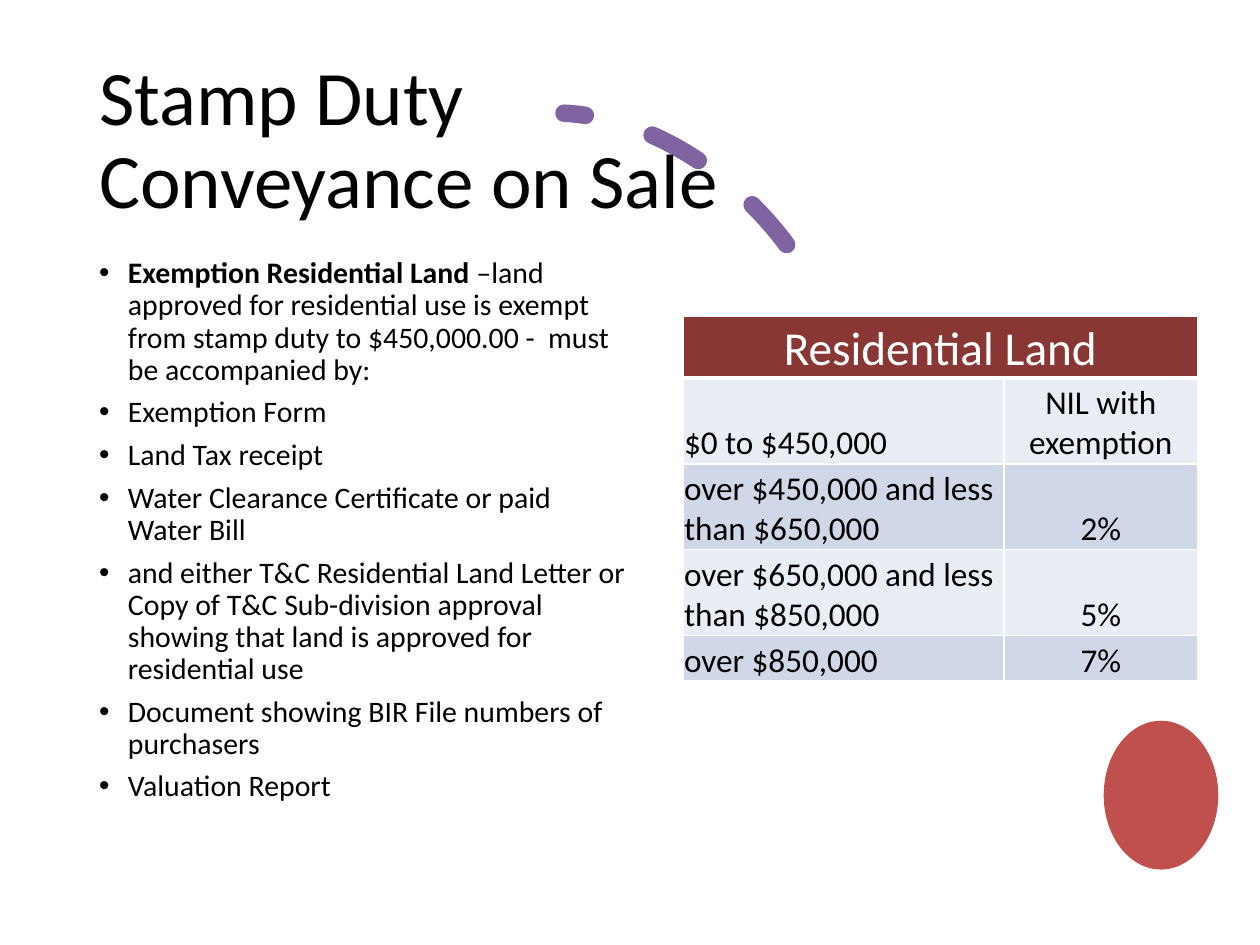
"""Build the stamp duty slide: exemption requirements beside a table of rates."""
from dataclasses import dataclass

from pptx import Presentation
from pptx import util as u
from pptx.dml.color import RGBColor
from pptx.enum import dml, shapes, text
from pptx.oxml.ns import qn
from lxml import etree

TITLE = "Stamp Duty\vConveyance on Sale"
REQUIREMENTS = [
    [("Exemption Residential Land", True),
     (" –land approved for residential use is exempt from stamp duty to "
      "$450,000.00 -  must be accompanied by:", False)],
    [("Exemption Form", False)],
    [("Land Tax receipt", False)],
    [("Water Clearance Certificate or paid Water Bill", False)],
    [("and either T&C Residential Land Letter or Copy of T&C Sub-division approval "
      "showing that land is approved for residential use", False)],
    [("Document showing BIR File numbers of purchasers", False)],
    [("Valuation Report", False)],
]
RATES_HEADING = "Residential Land"
RATES = [
    ("$0 to $450,000", "NIL with exemption"),
    ("over $450,000 and less than $650,000", "2%"),
    ("over $650,000 and less than $850,000", "5%"),
    ("over $850,000", "7%"),
]
BAND_WIDTHS = (6.47, 3.9)
RATE_HEIGHTS = (1.24, 1.73, 1.73, 1.73, 0.92)


@dataclass(frozen=True)
class Theme:
    font: str = "Calibri"
    ink: str = "000000"
    white: str = "FFFFFF"
    heading_fill: str = "883735"
    bands: tuple = ("E9EDF4", "D0D8E8")
    arc: str = "8064A2"
    dot: str = "C0504D"
    title_size: float = 44
    body_size: float = 17
    heading_size: float = 27
    rate_size: float = 19


THEME = Theme()


def rgb(value):
    return RGBColor.from_string(value)


def style(paragraph, size, color=THEME.ink):
    paragraph.font.name = THEME.font
    paragraph.font.size = u.Pt(size)
    paragraph.font.color.rgb = rgb(color)


def add_arc(slide):
    arc = slide.shapes.add_shape(
        shapes.MSO_SHAPE.ARC, u.Cm(6.78), u.Cm(3.23), u.Cm(11.35), u.Cm(8.51))
    arc.adjustments[0], arc.adjustments[1] = 162, 200.93
    arc.rotation = 233.1
    arc.shadow.inherit = False
    arc.fill.background()
    arc.line.color.rgb = rgb(THEME.arc)
    arc.line.width = u.Pt(10)
    arc.line.dash_style = dml.MSO_LINE.DASH
    properties = arc.element.spPr
    properties.find(qn("a:xfrm")).set("flipV", "1")
    properties.find(qn("a:ln")).set("cap", "rnd")


def add_text_frame(slide, left, top, width, height, anchor):
    frame = slide.shapes.add_textbox(*map(u.Cm, (left, top, width, height))).text_frame
    frame.word_wrap = True
    frame.vertical_anchor = anchor
    return frame


def add_title(slide):
    frame = add_text_frame(slide, 1.75, 1.02, 21.89, 3.68, text.MSO_ANCHOR.MIDDLE)
    heading = frame.paragraphs[0]
    heading.text = TITLE
    heading.line_spacing = 0.9
    style(heading, THEME.title_size)


def add_requirements(slide):
    frame = add_text_frame(slide, 1.75, 5.08, 11.23, 12.09, text.MSO_ANCHOR.TOP)
    indent = u.Cm(0.58)
    for index, parts in enumerate(REQUIREMENTS):
        requirement = frame.add_paragraph() if index else frame.paragraphs[0]
        requirement.line_spacing = 0.9
        requirement.space_after = u.Pt(6)
        properties = requirement._p.get_or_add_pPr()
        properties.set("marL", str(indent))
        properties.set("indent", str(-indent))
        etree.SubElement(properties, qn("a:buFont")).set("typeface", "Arial")
        etree.SubElement(properties, qn("a:buChar")).set("char", "•")
        style(requirement, THEME.body_size)
        for wording, bold in parts:
            run = requirement.add_run()
            run.text = wording
            run.font.bold = bold


def set_borders(cell, top, bottom):
    properties = cell._tc.get_or_add_tcPr()
    widths = {"lnL": 1, "lnR": 1, "lnT": top, "lnB": bottom}
    for position, (side, width) in enumerate(widths.items()):
        border = etree.Element(qn(f"a:{side}"), w=str(u.Pt(width)))
        fill = etree.SubElement(border, qn("a:solidFill"))
        etree.SubElement(fill, qn("a:srgbClr")).set("val", THEME.white)
        properties.insert(position, border)


def fill_cell(cell, wording, row, column):
    heading = row == 0
    cell.fill.solid()
    cell.fill.fore_color.rgb = rgb(
        THEME.heading_fill if heading else THEME.bands[(row - 1) % 2])
    cell.margin_left = cell.margin_right = cell.margin_top = u.Cm(0.02)
    cell.margin_bottom = 0
    cell.vertical_anchor = text.MSO_ANCHOR.BOTTOM
    set_borders(cell, 3 if row == 1 else 1, 3 if heading else 1)
    entry = cell.text_frame.paragraphs[0]
    entry.text = wording
    if heading or column == 1:
        entry.alignment = text.PP_ALIGN.CENTER
    style(entry, THEME.heading_size if heading else THEME.rate_size,
          THEME.white if heading else THEME.ink)


def add_rates(slide):
    rates = slide.shapes.add_table(
        len(RATE_HEIGHTS), len(BAND_WIDTHS), u.Cm(13.77), u.Cm(6.38),
        u.Cm(sum(BAND_WIDTHS)), u.Cm(sum(RATE_HEIGHTS))).table
    for column, width in zip(rates.columns, BAND_WIDTHS):
        column.width = u.Cm(width)
    for row, height in zip(rates.rows, RATE_HEIGHTS):
        row.height = u.Cm(height)
    for row, wordings in enumerate([(RATES_HEADING, ""), *RATES]):
        for column, wording in enumerate(wordings):
            fill_cell(rates.cell(row, column), wording, row, column)
    rates.cell(0, 0).merge(rates.cell(0, 1))


def add_dot(slide):
    dot = slide.shapes.add_shape(
        shapes.MSO_SHAPE.OVAL, u.Cm(22.25), u.Cm(14.53), u.Cm(2.31), u.Cm(3))
    dot.shadow.inherit = False
    dot.fill.solid()
    dot.fill.fore_color.rgb = rgb(THEME.dot)
    dot.line.fill.background()


def main():
    deck = Presentation()
    deck.slide_width, deck.slide_height = u.Cm(25.4), u.Cm(19.05)
    slide = deck.slides.add_slide(deck.slide_layouts[6])
    for add_part in (add_arc, add_title, add_requirements, add_dot, add_rates):
        add_part(slide)
    deck.save("out.pptx")


if __name__ == "__main__":
    main()
